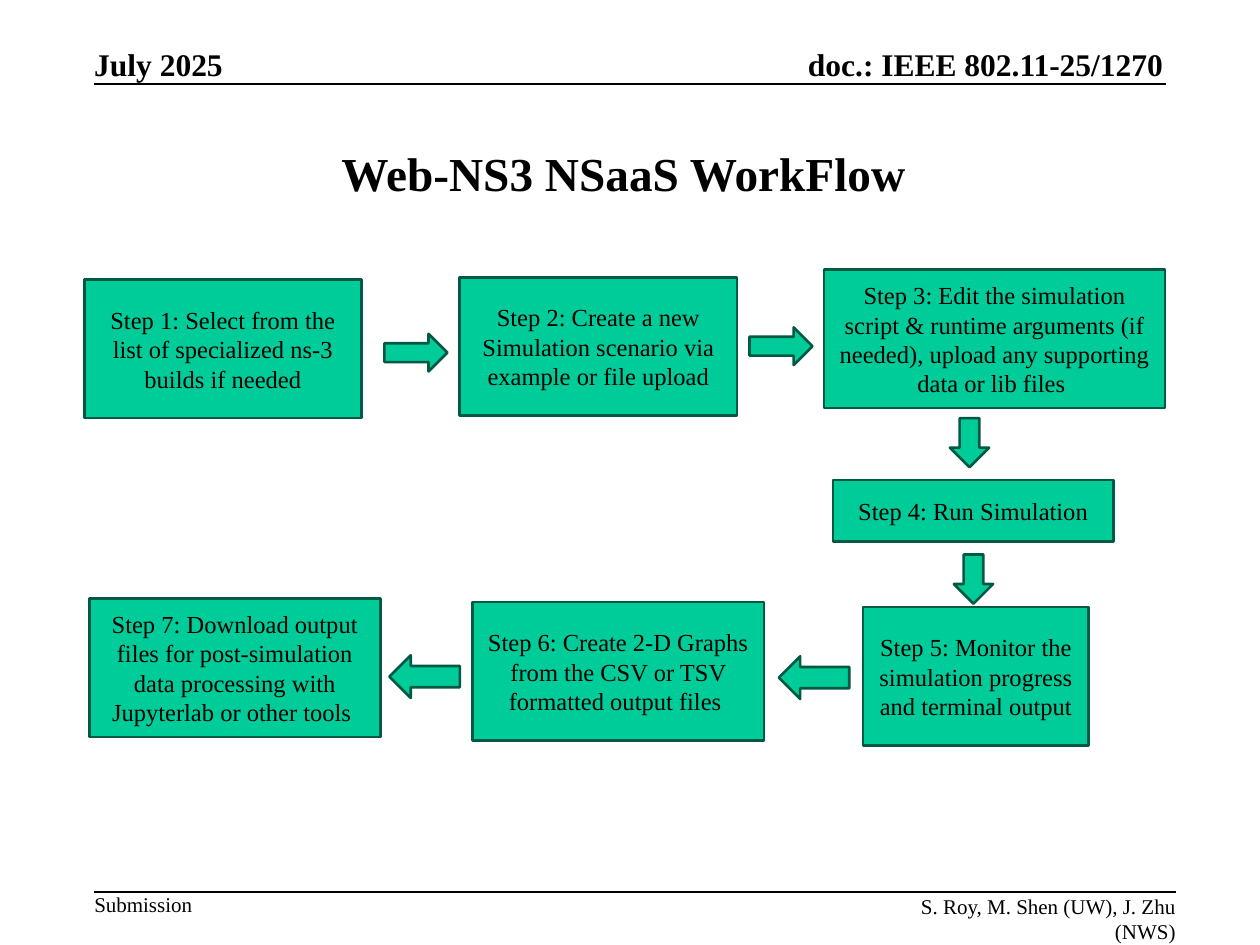
from lxml import etree
from pptx import Presentation
from pptx import util as u
from pptx.dml.color import RGBColor
from pptx.enum import shapes, text
from pptx.oxml import ns

BLACK = RGBColor(0x00, 0x00, 0x00)
GREEN = RGBColor(0x00, 0xCC, 0x99)
DARK_GREEN = RGBColor(0x00, 0x59, 0x43)
FONT = "Times New Roman"

LEFT, CENTER, RIGHT = text.PP_ALIGN.LEFT, text.PP_ALIGN.CENTER, text.PP_ALIGN.RIGHT
TOP, MIDDLE, BOTTOM = text.MSO_ANCHOR.TOP, text.MSO_ANCHOR.MIDDLE, text.MSO_ANCHOR.BOTTOM
ARROW_RIGHT = shapes.MSO_SHAPE.RIGHT_ARROW
ARROW_DOWN = shapes.MSO_SHAPE.DOWN_ARROW

STEP_HEIGHT = 2.79
STEPS = [
    (1.7, 5.64, 5.59, STEP_HEIGHT,
     "Step 1: Select from the list of specialized ns-3 builds if needed"),
    (9.27, 5.59, 5.59, STEP_HEIGHT,
     "Step 2: Create a new Simulation scenario via example or file upload"),
    (16.61, 5.44, 6.88, STEP_HEIGHT,
     "Step 3: Edit the simulation script & runtime arguments (if needed), "
     "upload any supporting data or lib files "),
    (16.79, 9.68, 5.66, 1.24, "Step 4: Run Simulation"),
    (17.4, 12.24, 4.55, STEP_HEIGHT,
     "Step 5: Monitor the simulation progress and terminal output"),
    (9.53, 12.14, 5.87, STEP_HEIGHT,
     "Step 6: Create 2-D Graphs from the CSV or TSV formatted output files "),
    (1.8, 12.07, 5.87, STEP_HEIGHT,
     "Step 7: Download output files for post-simulation data processing "
     "with Jupyterlab or other tools "),
]
ARROWS = [
    (ARROW_RIGHT, 7.75, 6.73, 1.27, 0.76, 0),
    (ARROW_RIGHT, 15.11, 6.6, 1.27, 0.76, 0),
    (ARROW_DOWN, 19.15, 8.43, 0.79, 0.99, 0),
    (ARROW_DOWN, 19.23, 11.18, 0.79, 0.99, 0),
    (ARROW_RIGHT, 15.7, 13.23, 1.42, 0.86, 180),
    (ARROW_RIGHT, 7.85, 13.21, 1.42, 0.86, 180),
]


def write(shape, words, size, align, anchor, bold=False):
    frame = shape.text_frame
    frame.text = words
    frame.word_wrap = True
    frame.vertical_anchor = anchor
    paragraph = frame.paragraphs[0]
    paragraph.alignment = align
    font = paragraph.runs[0].font
    font.name = FONT
    font.size = u.Pt(size)
    font.bold = bold
    font.color.rgb = BLACK


def add_label(slide, box, words, size, align, anchor, bold=False):
    label = slide.shapes.add_textbox(*map(u.Cm, box))
    write(label, words, size, align, anchor, bold)
    frame = label.text_frame
    frame.word_wrap = False
    frame.margin_left = frame.margin_right = 0
    frame.margin_top = frame.margin_bottom = 0


def add_rule(slide, left, right, y):
    rule = slide.shapes.add_connector(
        shapes.MSO_CONNECTOR.STRAIGHT, u.Cm(left), u.Cm(y), u.Cm(right), u.Cm(y))
    rule.line.color.rgb = BLACK
    rule.line.width = u.Pt(1)
    etree.SubElement(rule._element.spPr, ns.qn("a:effectLst"))


def add_green_shape(slide, kind, box):
    shape = slide.shapes.add_shape(kind, *map(u.Cm, box))
    shape.shadow.inherit = False
    shape.fill.solid()
    shape.fill.fore_color.rgb = GREEN
    shape.line.color.rgb = DARK_GREEN
    shape.line.width = u.Pt(1.5)
    return shape


def add_header(slide, left, top, width, height):
    date_width, document_width = 2.62, 8.51
    right = left + width
    add_label(slide, (left, top, date_width, height), "July 2025",
              18, LEFT, BOTTOM, True)
    add_label(slide, (right - 0.05 - document_width, top, document_width, height),
              "doc.: IEEE 802.11-25/1270", 18, RIGHT, BOTTOM, True)
    add_rule(slide, left, right, top + height + 0.03)


def add_title(slide, left, top, width, height):
    title = slide.shapes.add_textbox(*map(u.Cm, (left, top, width, height)))
    write(title, "Web-NS3 NSaaS WorkFlow ", 27, CENTER, MIDDLE, True)


def add_workflow(slide, left, top):
    for x, y, width, height, words in STEPS:
        step = add_green_shape(slide, shapes.MSO_SHAPE.RECTANGLE,
                               (left + x, top + y, width, height))
        write(step, words, 14, CENTER, MIDDLE)
    for kind, x, y, width, height, turn in ARROWS:
        arrow = add_green_shape(slide, kind, (left + x, top + y, width, height))
        arrow.rotation = turn


def add_footer(slide, left, top, width, height):
    submission_width, authors_width = 1.98, 6.35
    right = left + width
    add_rule(slide, left, right, top)
    add_label(slide, (left, top, submission_width, height), "Submission",
              12, LEFT, TOP)
    add_label(slide, (right - authors_width, top + 0.03, authors_width, height),
              "S. Roy, M. Shen (UW), J. Zhu (NWS)", 12, RIGHT, TOP)


def main():
    presentation = Presentation()
    presentation.slide_width = u.Cm(25.4)
    presentation.slide_height = u.Cm(19.05)
    slide = presentation.slides.add_slide(presentation.slide_layouts[6])
    add_header(slide, 1.9, 0.91, 21.6, 0.76)
    add_title(slide, 0.71, 2.62, 23.95, 1.73)
    add_workflow(slide, 0, 0)
    add_footer(slide, 1.9, 17.98, 21.8, 0.51)
    presentation.save("out.pptx")


if __name__ == "__main__":
    main()
